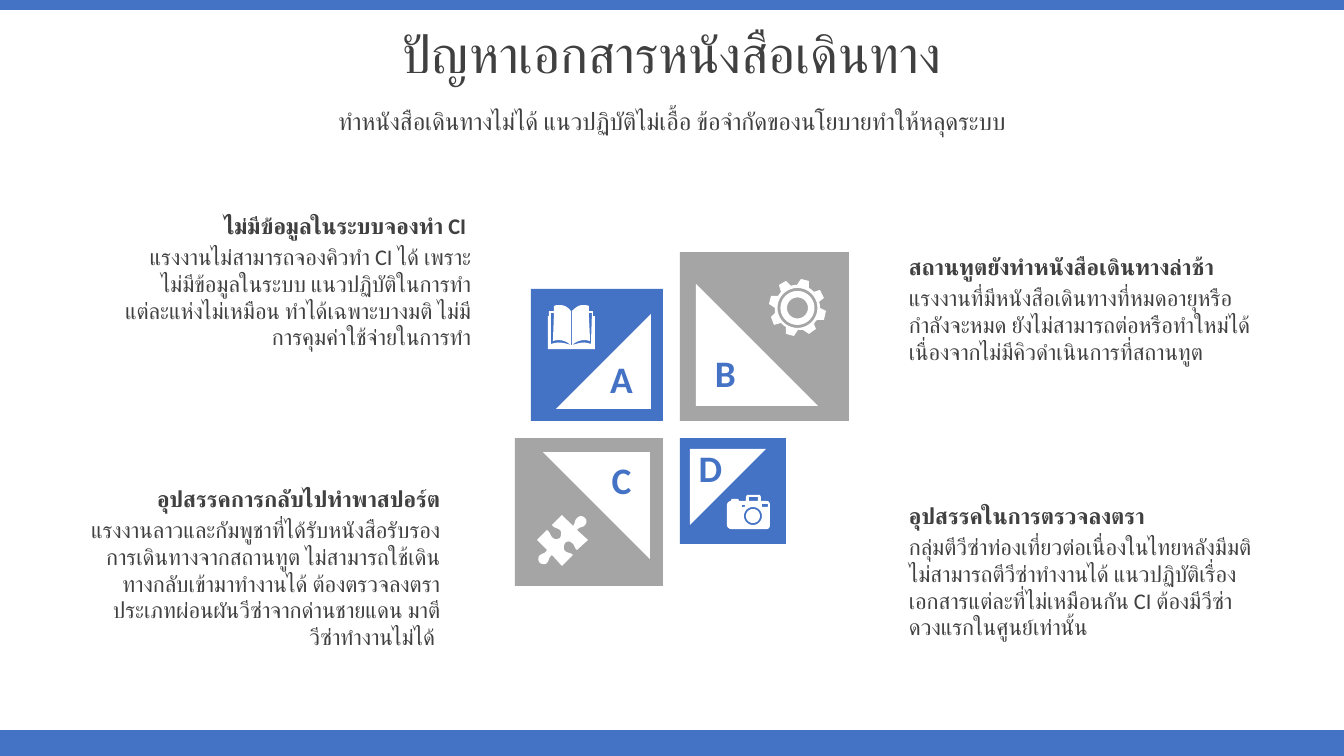
from dataclasses import dataclass
from math import cos, pi, sin

from pptx import Presentation
from pptx.dml.color import RGBColor
from pptx.enum.lang import MSO_LANGUAGE_ID
from pptx.enum.shapes import MSO_SHAPE
from pptx.enum.text import MSO_ANCHOR, MSO_AUTO_SIZE, PP_ALIGN
from pptx.oxml.ns import qn
from pptx.util import Emu, Pt

RECTANGLE, TRIANGLE = MSO_SHAPE.RECTANGLE, MSO_SHAPE.RIGHT_TRIANGLE
LEFT, CENTER, RIGHT = PP_ALIGN.LEFT, PP_ALIGN.CENTER, PP_ALIGN.RIGHT
TOP, MIDDLE = MSO_ANCHOR.TOP, MSO_ANCHOR.MIDDLE
FIXED, GROW = MSO_AUTO_SIZE.NONE, MSO_AUTO_SIZE.SHAPE_TO_FIT_TEXT
THAI = MSO_LANGUAGE_ID.THAI

SLIDE_WIDTH, SLIDE_HEIGHT = 1344, 756
EMU_PER_PX = 12192000 / SLIDE_WIDTH
TITLE_ONLY = 5
CURVE_STEPS = 6
CIRCLE_STEPS = 40


@dataclass(frozen=True)
class Theme:
    blue: RGBColor = RGBColor(0x44, 0x72, 0xC4)
    gray: RGBColor = RGBColor(0xA5, 0xA5, 0xA5)
    white: RGBColor = RGBColor(0xFF, 0xFF, 0xFF)
    text: RGBColor = RGBColor(0x40, 0x40, 0x40)
    font: str = "Calibri"
    title: float = 37.2
    subtitle: float = 17.3
    letter: float = 26.7
    body: float = 16


THEME = Theme()

BOOK = (
    "M 23 40 L 24 40 C 32 38 35 36 43 39 L 44 8 L 41 8 C 41 17 42 27 42 36 "
    "C 36 34 30 35 24 40 L 24 6 C 28 2 31 0 35 0 C 37 0 39 0 41 1 L 41 6 L 45 6 "
    "L 45 11 L 47 11 L 47 44 L 0 44 L 0 11 L 1 11 L 1 6 L 6 6 L 6 1 "
    "C 8 0 10 0 12 0 C 16 0 20 2 23 6 L 23 40 C 17 35 11 34 5 36 L 6 8 L 3 8 "
    "L 3 39 C 11 36 16 38 23 40"
)
GEAR = (
    "O 28.5 29 10.5 O 28.5 29 17 O 28.5 29 20 "
    "M 40 2 L 40 9 C 42 10 43 11 45 13 L 51 11 L 55 19 L 50 23 C 51 25 51 27 51 29 "
    "L 57 32 L 55 41 L 48 41 C 47 42 46 43 45 45 L 47 50 L 40 55 L 34 51 "
    "C 33 51 31 51 29 51 L 25 57 L 17 55 L 17 48 C 15 47 14 46 12 44 L 5 46 "
    "L 2 38 L 6 34 C 6 32 6 31 6 29 L 0 25 L 2 17 L 9 17 C 10 16 11 14 12 13 "
    "L 10 6 L 17 2 L 22 7 C 24 6 26 6 28 6 L 32 0"
)
PUZZLE = (
    "M 48 3 C 50 5 50 8 48 10 C 46 13 43 11 40 15 L 51 25 L 40 35 "
    "C 37 33 38 30 35 28 C 33 26 30 26 28 28 C 27 30 26 33 28 36 "
    "C 32 39 33 37 36 40 L 25 51 L 15 40 C 11 43 13 44 10 48 C 8 50 4 49 3 48 "
    "C 1 46 1 43 2 41 C 5 38 8 39 10 35 L 0 25 L 10 15 C 14 18 13 21 16 23 "
    "C 18 25 21 24 23 23 C 24 21 25 17 23 15 C 19 12 18 14 15 10 L 25 0 L 36 11 "
    "C 39 7 37 6 40 3 C 43 0 46 1 48 3"
)
CAMERA = (
    "O 26 21 7 O 26 21 9 M 15 10 L 15 12 L 18 12 L 18 10 "
    "M 35 9 L 35 12 L 41 12 L 41 9 M 22 2 L 22 6 L 31 6 L 31 2 "
    "M 20 0 L 33 0 L 34 2 L 34 6 L 40 6 C 42 6 43 8 43 10 L 43 30 "
    "C 43 32 42 34 40 34 L 4 34 C 2 34 0 32 0 30 L 0 10 C 0 8 2 6 4 6 L 4 5 L 5 4 "
    "L 11 4 L 12 5 L 12 6 L 19 6 L 19 2"
)

# letter, colour, tile (x, y, side), triangle (x, y, side), turn, letter place, icon, icon place
TILES = [
    ("A", THEME.blue, (531, 289, 132), (556, 314, 95), 270, (592, 351), BOOK, (548, 305)),
    ("B", THEME.gray, (680, 252, 169), (696, 284, 122), 0, (696, 345), GEAR, (769, 279)),
    ("C", THEME.gray, (515, 438, 148), (543, 452, 107), 180, (592, 452), PUZZLE, (537, 515)),
    ("D", THEME.blue, (680, 438, 106), (690, 449, 76), 90, (681, 440), CAMERA, (727, 495)),
]

# x, y, body height, alignment, heading, body
ISSUES = [
    (108, 207, 162, RIGHT, "ไม่มีข้อมูลในระบบจองทำ CI ",
     "แรงงานไม่สามารถจองคิวทำ CI ได้ เพราะไม่มีข้อมูลในระบบ แนวปฏิบัติในการทำแต่ละแห่งไม่เหมือน "
     "ทำได้เฉพาะบางมติ ไม่มีการคุมค่าใช้จ่ายในการทำ"),
    (77, 480, 201, RIGHT, "อุปสรรคการกลับไปทำพาสปอร์ต",
     "แรงงานลาวและกัมพูชาที่ได้รับหนังสือรับรองการเดินทางจากสถานทูต "
     "ไม่สามารถใช้เดินทางกลับเข้ามาทำงานได้ "
     "ต้องตรวจลงตราประเภทผ่อนผันวีซ่าจากด่านชายแดน มาตีวีซ่าทำงานไม่ได้ "),
    (899, 248, 162, LEFT, "สถานทูตยังทำหนังสือเดินทางล่าช้า",
     "แรงงานที่มีหนังสือเดินทางที่หมดอายุหรือกำลังจะหมด ยังไม่สามารถต่อหรือทำใหม่ได้ "
     "เนื่องจากไม่มีคิวดำเนินการที่สถานทูต"),
    (899, 497, 162, LEFT, "อุปสรรคในการตรวจลงตรา",
     "กลุ่มตีวีซ่าท่องเที่ยวต่อเนื่องในไทยหลังมีมติ ไม่สามารถตีวีซ่าทำงานได้ "
     "แนวปฏิบัติเรื่องเอกสารแต่ละที่ไม่เหมือนกัน CI ต้องมีวีซ่าดวงแรกในศูนย์เท่านั้น"),
]


def px(length):
    return Emu(round(length * EMU_PER_PX))


def apply(target, values):
    for attribute, value in values.items():
        setattr(target, attribute, value)


def paint(shape, color):
    shape.shadow.inherit = False
    shape.fill.solid()
    shape.fill.fore_color.rgb = color
    shape.line.fill.background()


def add_block(slide, kind, box, color, rotation=0):
    block = slide.shapes.add_shape(kind, *map(px, box))
    block.rotation = rotation
    paint(block, color)


def write(holder, text, size, align, color=THEME.text, bold=False,
          anchor=TOP, fit=GROW, spacing=1.0):
    frame = holder.text_frame
    apply(frame, {"word_wrap": True, "vertical_anchor": anchor, "auto_size": fit})
    paragraph = frame.paragraphs[0]
    apply(paragraph, {"alignment": align, "line_spacing": spacing, "space_before": Pt(0)})
    run = paragraph.add_run()
    run.text = text
    apply(run.font, {"size": Pt(size), "bold": bold, "name": THEME.font, "language_id": THAI})
    run.font.color.rgb = color
    complex_script = run.font._element.makeelement(qn("a:cs"), {"typeface": THEME.font})
    run.font._element.append(complex_script)


def add_text(slide, box, *args, **formats):
    write(slide.shapes.add_textbox(*map(px, box)), *args, **formats)


def curve(points):
    """Flatten a cubic curve, leaving out its first point."""
    flat = []
    for step in range(1, CURVE_STEPS + 1):
        t = step / CURVE_STEPS
        weights = ((1 - t) ** 3, 3 * t * (1 - t) ** 2, 3 * t * t * (1 - t), t ** 3)
        flat.append(tuple(sum(w * p[axis] for w, p in zip(weights, points)) for axis in (0, 1)))
    return flat


def circle(x, y, radius):
    angles = [2 * pi * step / CIRCLE_STEPS for step in range(CIRCLE_STEPS)]
    return [(x + radius * cos(a), y + radius * sin(a)) for a in angles]


def contours(outline):
    """Read M (move), L (line), C (curve) and O (circle) commands into point lists."""
    tokens = iter(outline.split())
    found = []
    for command in tokens:
        count = {"M": 2, "L": 2, "C": 6, "O": 3}[command]
        numbers = [float(next(tokens)) for _ in range(count)]
        if command == "O":
            found.append(circle(*numbers))
            continue
        points = list(zip(numbers[::2], numbers[1::2]))
        if command == "M":
            found.append(points)
        else:
            found[-1] += curve([found[-1][-1], *points]) if command == "C" else points
    return found


def add_icon(slide, outline, place):
    left, top = place
    parts = [[(px(left + x), px(top + y)) for x, y in part] for part in contours(outline)]
    builder = slide.shapes.build_freeform(*parts[0][0])
    for part in parts:
        builder.move_to(*part[0])
        builder.add_line_segments(part[1:], close=True)
    paint(builder.convert_to_shape(), THEME.white)


def add_tile(slide, letter, color, tile, triangle, turn, letter_at, icon, icon_at):
    add_block(slide, RECTANGLE, (*tile, tile[2]), color)
    add_block(slide, TRIANGLE, (*triangle, triangle[2]), THEME.white, turn)
    add_text(slide, (*letter_at, 59, 55), letter, THEME.letter, CENTER,
             color=THEME.blue, bold=True)
    add_icon(slide, icon, icon_at)


def add_issue(slide, x, y, body_height, align, heading, body):
    add_text(slide, (x, y + 31, 373, body_height), body, THEME.body, align)
    add_text(slide, (x, y, 373, 48), heading, THEME.body, align, bold=True)


def add_headings(slide):
    centered = {"anchor": MIDDLE, "fit": FIXED, "spacing": 0.7}
    title = slide.shapes.title
    apply(title, {"left": px(0), "top": px(18), "width": px(SLIDE_WIDTH), "height": px(85)})
    write(title, "ปัญหาเอกสารหนังสือเดินทาง", THEME.title, CENTER, **centered)
    add_text(slide, (0, 103, SLIDE_WIDTH, 42),
             "ทำหนังสือเดินทางไม่ได้ แนวปฏิบัติไม่เอื้อ ข้อจำกัดของนโยบายทำให้หลุดระบบ",
             THEME.subtitle, CENTER, **centered)


def main():
    deck = Presentation()
    apply(deck, {"slide_width": px(SLIDE_WIDTH), "slide_height": px(SLIDE_HEIGHT)})
    slide = deck.slides.add_slide(deck.slide_layouts[TITLE_ONLY])
    for top, height in ((730, 26), (0, 10)):
        add_block(slide, RECTANGLE, (0, top, SLIDE_WIDTH, height), THEME.blue)
    add_headings(slide)
    for tile in TILES:
        add_tile(slide, *tile)
    for issue in ISSUES:
        add_issue(slide, *issue)
    deck.save("out.pptx")


if __name__ == "__main__":
    main()
